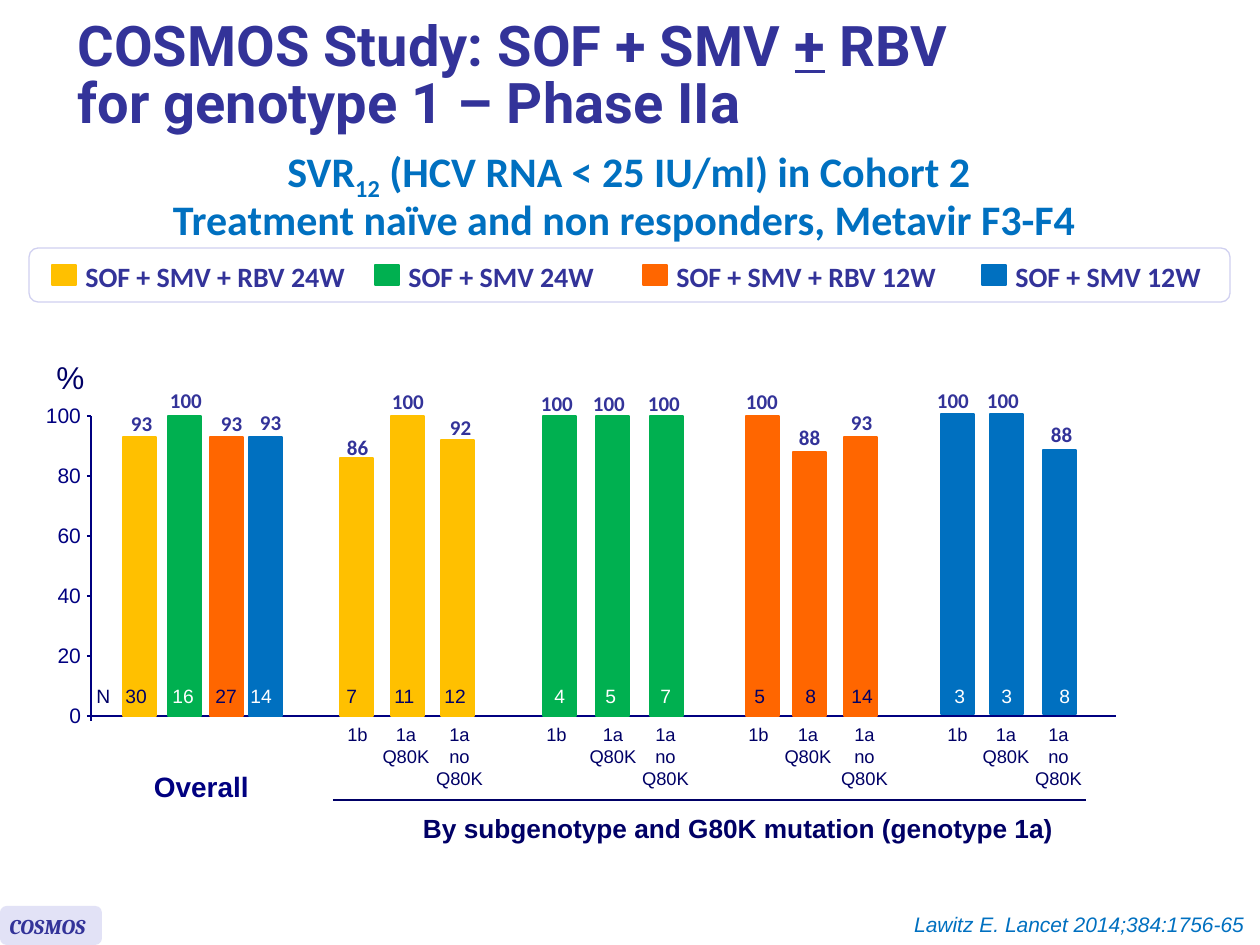
from dataclasses import dataclass

from lxml.etree import SubElement
from pptx import Presentation
from pptx.dml.color import RGBColor
from pptx.enum.shapes import MSO_CONNECTOR, MSO_SHAPE
from pptx.enum.text import MSO_ANCHOR, MSO_AUTO_SIZE, PP_ALIGN
from pptx.oxml.ns import qn
from pptx.util import Emu, Pt

COLORS = {
    "yellow": "FFC000", "green": "00B050", "orange": "FF6600", "blue": "0070C0",
    "indigo": "333399", "axis": "000080", "navy": "000066", "white": "FFFFFF",
    "badge": "E2E2F6", "frame": "D0D0F0",
}
NUMBER_COLORS = {"yellow": "navy", "orange": "navy", "green": "white", "blue": "white"}
BASE, PX_PER_PERCENT = 716, 3
AXIS_X = 91
BAR_WIDTH = 33


@dataclass(frozen=True)
class Style:
    size: float
    color: str
    font: str = "Arial"
    bold: bool = False
    italic: bool = False


@dataclass(frozen=True)
class Bar:
    left: int
    value: int
    value_left: int
    value_top: int
    count: int
    count_left: int


@dataclass(frozen=True)
class Group:
    color: str
    bars: tuple[Bar, ...]
    label_lefts: tuple[int, ...]
    base: int = BASE


@dataclass(frozen=True)
class Legend:
    left: int
    color: str
    label: str
    width: int


VALUE = Style(12, "indigo", "Calibri", bold=True)
TICK = Style(12, "axis")
GENOTYPE = Style(10.5, "navy")
HEADING = Style(24, "blue", "Calibri", bold=True)

OVERALL = {
    "yellow": Bar(123, 93, 131, 411, 30, 113),
    "green": Bar(168, 100, 170, 388, 16, 160),
    "orange": Bar(210, 93, 221, 411, 27, 203),
    "blue": Bar(249, 93, 260, 410, 14, 238),
}
SUBGROUPS = (
    Group("yellow", (Bar(340, 86, 347, 435, 7, 334), Bar(391, 100, 392, 389, 11, 382),
                     Bar(441, 92, 450, 415, 12, 432)), (334, 368, 423)),
    Group("green", (Bar(543, 100, 541, 391, 4, 542), Bar(596, 100, 593, 391, 5, 593),
                    Bar(650, 100, 648, 391, 7, 648)), (533, 575, 629)),
    Group("orange", (Bar(746, 100, 746, 389, 5, 742), Bar(793, 88, 799, 425, 8, 793),
                     Bar(844, 93, 851, 410, 14, 839)), (735, 770, 828)),
    Group("blue", (Bar(941, 100, 937, 388, 3, 942), Bar(990, 100, 987, 388, 3, 989),
                   Bar(1043, 88, 1051, 422, 8, 1047)), (934, 968, 1022), 714),
)
GENOTYPES = ((("1b",), 47), (("1a", "Q80K"), 76), (("1a", "no", "Q80K"), 73))
LEGENDS = (
    Legend(52, "yellow", "SOF + SMV + RBV 24W", 289),
    Legend(375, "green", "SOF + SMV 24W", 214),
    Legend(643, "orange", "SOF + SMV + RBV 12W", 289),
    Legend(982, "blue", "SOF + SMV 12W", 214),
)


def px(length: int) -> Emu:
    return Emu(round(length * 914400 / 126))


def rgb(name: str) -> RGBColor:
    return RGBColor.from_string(COLORS[name])


def style_para(para, style: Style, align=PP_ALIGN.LEFT, spacing=None) -> None:
    para.alignment = align
    if spacing:
        para.line_spacing = spacing
    font = para.font
    font.name, font.size = style.font, Pt(style.size)
    font.bold, font.italic = style.bold, style.italic
    font.color.rgb = rgb(style.color)


def add_text(page, left: int, top: int, width: int, height: int, lines: tuple[str, ...],
             style: Style, align=PP_ALIGN.LEFT, inset=True, wrap=False, spacing=None):
    box = page.shapes.add_textbox(px(left), px(top), px(width), px(height))
    frame = box.text_frame
    frame.word_wrap = wrap
    frame.auto_size = MSO_AUTO_SIZE.SHAPE_TO_FIT_TEXT
    if not inset:
        frame.margin_left = frame.margin_right = frame.margin_top = frame.margin_bottom = 0
    for index, line in enumerate(lines):
        para = frame.add_paragraph() if index else frame.paragraphs[0]
        para.text = line
        style_para(para, style, align, spacing)
    return frame


def add_block(page, left: int, top: int, width: int, height: int, fill: str,
              line: str | None = None, kind=MSO_SHAPE.RECTANGLE) -> None:
    block = page.shapes.add_shape(kind, px(left), px(top), px(width), px(height))
    block.shadow.inherit = False
    block.fill.solid()
    block.fill.fore_color.rgb = rgb(fill)
    if line:
        block.line.color.rgb = rgb(line)
        block.line.width = Pt(0.75)
    else:
        block.line.fill.background()


def add_line(page, x1: int, y1: int, x2: int, y2: int, color: str) -> None:
    line = page.shapes.add_connector(MSO_CONNECTOR.STRAIGHT, px(x1), px(y1), px(x2), px(y2))
    line.line.color.rgb = rgb(color)
    line.line.width = Pt(0.75)
    SubElement(line._element.spPr, qn("a:effectLst"))


def add_bar(page, bar: Bar, color: str, base: int = BASE) -> None:
    height = bar.value * PX_PER_PERCENT
    add_block(page, bar.left, base - height, BAR_WIDTH, height, color, color)
    add_text(page, bar.value_left, bar.value_top, 36 if bar.value == 100 else 26, 25,
             (str(bar.value),), VALUE, inset=False)
    add_text(page, bar.count_left, 678, 47 if bar.count > 9 else 37, 37,
             (str(bar.count),), Style(11, NUMBER_COLORS[color]))


def add_headings(page) -> None:
    title = page.shapes.title
    title.left, title.top, title.width, title.height = px(65), px(10), px(1150), px(135)
    frame = title.text_frame
    frame.auto_size = MSO_AUTO_SIZE.NONE
    frame.vertical_anchor = MSO_ANCHOR.MIDDLE
    para = frame.paragraphs[0]
    para.add_run().text = "COSMOS Study: SOF + SMV "
    span = para.add_run()
    span.text = "+"
    span.font.underline = True
    para.add_run().text = " RBV "
    para.add_line_break()
    para.add_run().text = "for genotype 1 – Phase IIa"
    style_para(para, Style(32, "indigo", "Roboto", bold=True), spacing=0.85)

    subtitle = add_text(page, 156, 155, 946, 97,
                        ("SVR", "Treatment naïve and non responders, Metavir F3-F4 "),
                        HEADING, PP_ALIGN.CENTER, spacing=Pt(23.6))
    para = subtitle.paragraphs[0]
    span = para.add_run()
    span.text = "12"
    span.font._element.set("baseline", "-25000")
    para.add_run().text = " (HCV RNA < 25 IU/ml) in Cohort 2"


def add_axes(page) -> None:
    top = BASE - 100 * PX_PER_PERCENT
    add_line(page, AXIS_X, top, AXIS_X, BASE + 5, "axis")
    add_line(page, AXIS_X, BASE, 1116, BASE, "axis")
    for tick in range(0, 101, 20):
        y = BASE - tick * PX_PER_PERCENT
        add_line(page, AXIS_X - 4, y, AXIS_X, y, "axis")
        add_text(page, 41, y - 13, 40, 25, (str(tick),), TICK, PP_ALIGN.RIGHT, inset=False)
    add_text(page, 44, 352, 43, 37, ("%",), Style(18, "navy"))
    add_text(page, 84, 678, 39, 37, ("N",), Style(11, "navy"))


def main() -> None:
    deck = Presentation()
    deck.slide_width, deck.slide_height = px(1260), px(945)
    page = deck.slides.add_slide(deck.slide_layouts[5])
    add_headings(page)

    # Legend
    add_block(page, 29, 248, 1201, 54, "white", "frame", MSO_SHAPE.ROUNDED_RECTANGLE)
    for item in LEGENDS:
        add_block(page, item.left, 265, 24, 20, item.color, item.color)
        add_text(page, item.left + 21, 253, item.width, 47, (item.label,),
                 Style(16, "indigo", "Calibri", bold=True))

    # Bars with their values, counts and genotype labels
    add_axes(page)
    for color, bar in OVERALL.items():
        add_bar(page, bar, color)
    for group in SUBGROUPS:
        for bar in group.bars:
            add_bar(page, bar, group.color, group.base)
        for left, (lines, width) in zip(group.label_lefts, GENOTYPES):
            add_text(page, left, 717, width, 15 + 22 * len(lines), lines, GENOTYPE,
                     PP_ALIGN.CENTER)

    # Group captions
    add_text(page, 154, 770, 96, 34, ("Overall",), Style(16, "axis", bold=True), inset=False)
    add_line(page, 333, 800, 1086, 800, "navy")
    add_text(page, 407, 810, 662, 42, ("By subgenotype and G80K mutation (genotype 1a)",),
             Style(15, "navy", bold=True), PP_ALIGN.CENTER, spacing=0.9)

    # Study badge and citation
    add_block(page, 0, 906, 102, 39, "badge", kind=MSO_SHAPE.ROUNDED_RECTANGLE)
    add_text(page, -3, 907, 111, 38, ("COSMOS",),
             Style(12, "indigo", "Cambria", bold=True, italic=True), wrap=True)
    add_text(page, 841, 905, 416, 38, ("Lawitz E. Lancet 2014;384:1756-65",),
             Style(12, "blue", italic=True), PP_ALIGN.RIGHT, wrap=True)

    deck.save("out.pptx")


if __name__ == "__main__":
    main()
